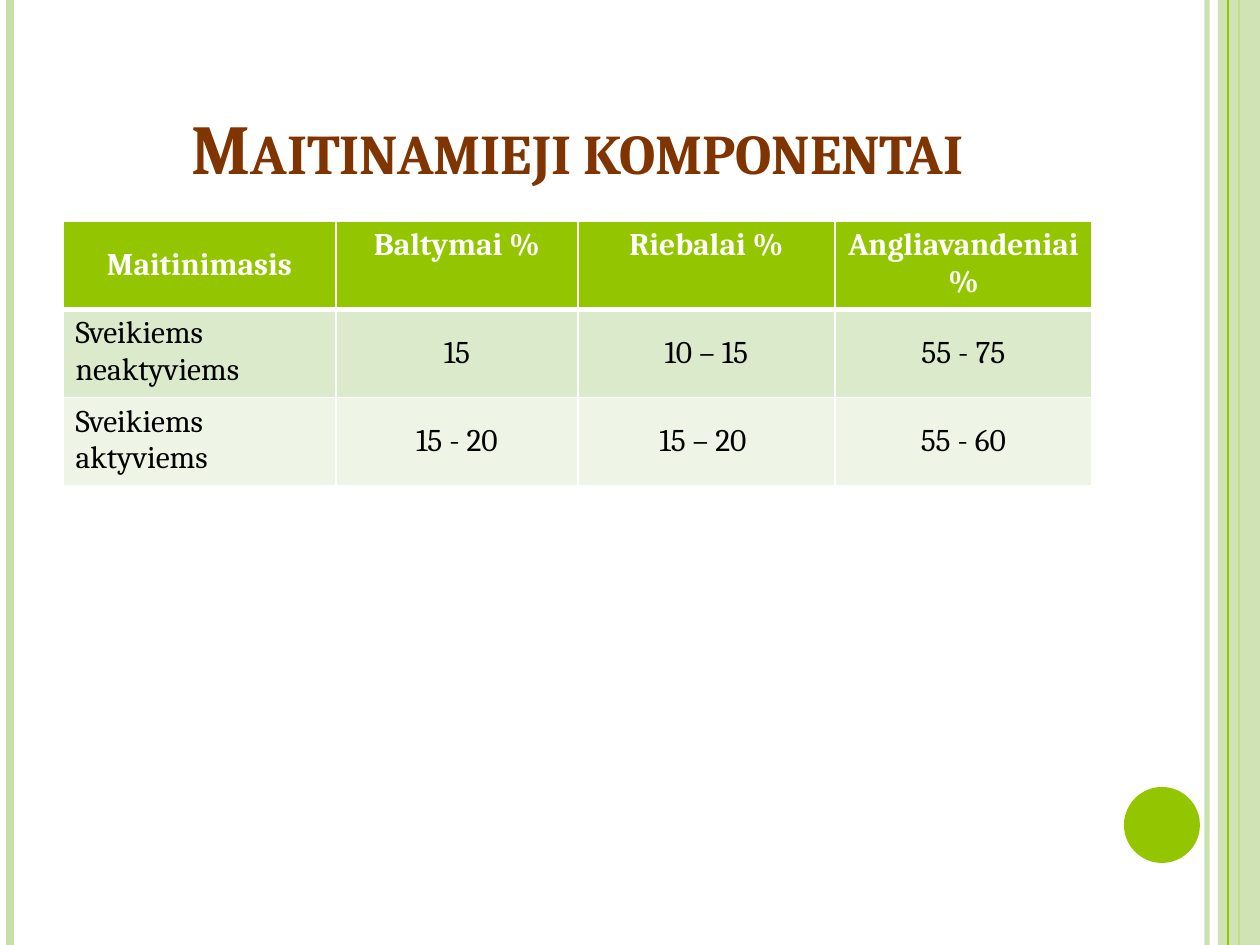
from pptx import Presentation
from pptx.dml.color import RGBColor
from pptx.enum.shapes import MSO_CONNECTOR, MSO_SHAPE
from pptx.enum.text import MSO_ANCHOR, PP_ALIGN
from pptx.oxml.ns import qn
from pptx.util import Emu, Pt
from lxml import etree

STRAIGHT = MSO_CONNECTOR.STRAIGHT
RECTANGLE, OVAL = MSO_SHAPE.RECTANGLE, MSO_SHAPE.OVAL
TOP, MIDDLE, BOTTOM = MSO_ANCHOR.TOP, MSO_ANCHOR.MIDDLE, MSO_ANCHOR.BOTTOM
LEFT, CENTER = PP_ALIGN.LEFT, PP_ALIGN.CENTER

EMU_PER_PX = 914400 / 126
WIDTH, HEIGHT = 1260, 945
FONT = "Cambria"
GREEN, PALE_GREEN, WHITE, BLACK, BROWN = "94C600", "C8DFAB", "FFFFFF", "000000", "803400"
ROW_FILLS = [GREEN, "DCEACC", "EEF5E7"]

COLUMN_WIDTHS = [273, 242, 257, 257]
ROW_HEIGHT = 85
NUTRITION = [
    ["Maitinimasis", "Baltymai %", "Riebalai %", "Angliavandeniai %"],
    ["Sveikiems neaktyviems", "15", "10 – 15", "55 - 75"],
    ["Sveikiems aktyviems", "15 - 20", "15 – 20 ", "55 - 60"],
]


def px(length):
    return Emu(round(length * EMU_PER_PX))


def color(hex_code):
    return RGBColor.from_string(hex_code)


def set_alpha(fill_parent, percent):
    srgb = next(fill_parent.iter(qn("a:srgbClr")))
    etree.SubElement(srgb, qn("a:alpha")).set("val", str(percent * 1000))


def add_stripe(slide, x, hex_code, points, opacity=100):
    stripe = slide.shapes.add_connector(STRAIGHT, px(x), 0, px(x), px(HEIGHT))
    stripe.line.color.rgb = color(hex_code)
    stripe.line.width = Pt(points)
    properties = stripe._element.spPr
    if opacity < 100:
        set_alpha(properties, opacity)
    etree.SubElement(properties, qn("a:effectLst"))


def add_block(slide, kind, left, top, width, height, hex_code, opacity=100):
    block = slide.shapes.add_shape(kind, px(left), px(top), px(width), px(height))
    block.shadow.inherit = False
    block.fill.solid()
    block.fill.fore_color.rgb = color(hex_code)
    block.line.fill.background()
    if opacity < 100:
        set_alpha(block._element.spPr, opacity)


def write(frame, text, size, hex_code, bold, align):
    paragraph = frame.paragraphs[0]
    paragraph.alignment = align
    run = paragraph.add_run()
    run.text = text
    run.font.name = FONT
    run.font.size = Pt(size)
    run.font.bold = bold
    run.font.color.rgb = color(hex_code)
    return run


def add_title(slide, text):
    frame = slide.shapes.add_textbox(px(63), px(38), px(1029), px(157)).text_frame
    frame.word_wrap = True
    frame.vertical_anchor = BOTTOM
    run = write(frame, text, 40, BROWN, True, CENTER)
    run.font._element.set("cap", "small")


def set_borders(cell, bottom_points):
    properties = cell._tc.get_or_add_tcPr()
    for side, points in (("L", 1), ("R", 1), ("T", 1), ("B", bottom_points)):
        border = etree.SubElement(properties, qn(f"a:ln{side}"), w=str(Pt(points)))
        fill = etree.SubElement(border, qn("a:solidFill"))
        etree.SubElement(fill, qn("a:srgbClr"), val=WHITE)


def add_nutrition_table(slide):
    table = slide.shapes.add_table(
        len(NUTRITION), len(COLUMN_WIDTHS), px(63), px(221),
        px(sum(COLUMN_WIDTHS)), px(ROW_HEIGHT * len(NUTRITION))).table
    for column, width in zip(table.columns, COLUMN_WIDTHS):
        column.width = px(width)
    for r, values in enumerate(NUTRITION):
        table.rows[r].height = px(ROW_HEIGHT)
        header = r == 0
        for c, value in enumerate(values):
            cell = table.cell(r, c)
            # Header: only the first label is centred vertically; body: all but it
            cell.vertical_anchor = MIDDLE if header == (c == 0) else TOP
            # Borders come before the fill in the cell properties;
            # the thick header rule is shared with the row below
            set_borders(cell, 3 if header else 1)
            if r == 1:
                cell._tc.tcPr.find(qn("a:lnT")).set("w", str(Pt(3)))
            cell.fill.solid()
            cell.fill.fore_color.rgb = color(ROW_FILLS[r])
            write(cell.text_frame, value, 18, WHITE if header else BLACK, header,
                  CENTER if header or c > 0 else LEFT)


def main():
    deck = Presentation()
    deck.slide_width, deck.slide_height = px(WIDTH), px(HEIGHT)
    slide = deck.slides.add_slide(deck.slide_layouts[6])

    # Side decoration
    add_stripe(slide, 1207, PALE_GREEN, 3, opacity=93)
    add_stripe(slide, 10, PALE_GREEN, 4.5)
    add_stripe(slide, 1239, GREEN, 1.5)
    add_block(slide, RECTANGLE, 1218, 0, 42, HEIGHT, PALE_GREEN, opacity=87)
    add_stripe(slide, 1228, GREEN, 0.75)
    add_block(slide, OVAL, 1124, 787, 76, 76, GREEN)

    # Content
    add_title(slide, "Maitinamieji komponentai")
    add_nutrition_table(slide)

    deck.save("out.pptx")


if __name__ == "__main__":
    main()
